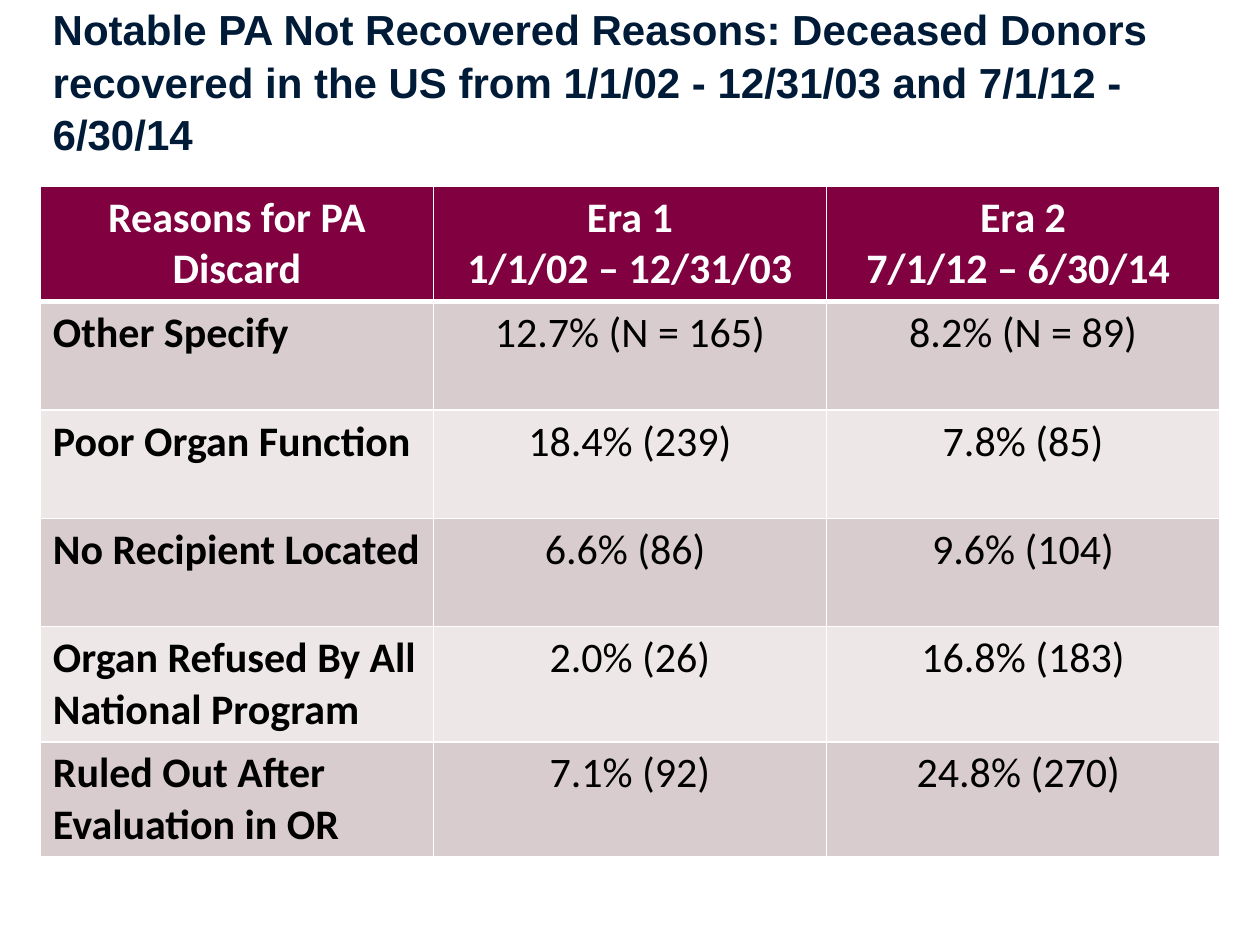
import dataclasses
import typing

import lxml.etree
import pptx
import pptx.dml.color
import pptx.enum.text
import pptx.oxml.ns
import pptx.util

Align = pptx.enum.text.PP_ALIGN


@dataclasses.dataclass(frozen=True)
class Theme:
    title_font: str = "Arial"
    table_font: str = "Calibri"
    size: int = 24
    title: str = "001B37"
    header: str = "800040"
    header_text: str = "FFFFFF"
    body_text: str = "000000"
    border: str = "FFFFFF"
    bands: tuple[str, str] = ("D8CCCF", "EDE7E8")


class Reason(typing.NamedTuple):
    name: str
    era_1: str
    era_2: str


THEME = Theme()
SLIDE_WIDTH = pptx.util.Inches(10)
SLIDE_HEIGHT = pptx.util.Inches(7.5)
LEFT = pptx.util.Inches(0.32)
COLUMN_WIDTH = pptx.util.Inches(3.12)
ROW_HEIGHT = pptx.util.Inches(0.86)

TITLE = ("Notable PA Not Recovered Reasons: Deceased Donors recovered in the US "
         "from 1/1/02 - 12/31/03 and 7/1/12 - 6/30/14")
HEADINGS = ("Reasons for PA Discard", "Era 1\n1/1/02 – 12/31/03", "Era 2\n7/1/12 – 6/30/14 ")
REASONS = (
    Reason("Other Specify", "12.7% (N = 165)", "8.2% (N = 89)"),
    Reason("Poor Organ Function", "18.4% (239)", "7.8% (85)"),
    Reason("No Recipient Located", "6.6% (86) ", "9.6% (104)"),
    Reason("Organ Refused By All National Program", "2.0% (26)", "16.8% (183)"),
    Reason("Ruled Out After Evaluation in OR", "7.1% (92)", "24.8% (270) "),
)


def rgb(color: str) -> pptx.dml.color.RGBColor:
    return pptx.dml.color.RGBColor.from_string(color)


def style_text(frame, font_name: str, color: str, bold: bool, align: Align) -> None:
    for paragraph in frame.paragraphs:
        paragraph.alignment = align
        paragraph.font.name = font_name
        paragraph.font.size = pptx.util.Pt(THEME.size)
        paragraph.font.bold = bold
        paragraph.font.color.rgb = rgb(color)


def set_borders(cell, top: float, bottom: float) -> None:
    """Draw all four cell borders, one point wide at the sides."""
    qn = pptx.oxml.ns.qn
    properties = cell._tc.get_or_add_tcPr()
    widths = {"a:lnL": 1, "a:lnR": 1, "a:lnT": top, "a:lnB": bottom}
    for position, (tag, width) in enumerate(widths.items()):
        line = lxml.etree.Element(qn(tag), w=str(pptx.util.Pt(width)))
        fill = lxml.etree.SubElement(line, qn("a:solidFill"))
        lxml.etree.SubElement(fill, qn("a:srgbClr"), val=THEME.border)
        properties.insert(position, line)


def fill_cell(cell, text: str, row: int, column: int) -> None:
    is_header = row == 0
    is_name = column == 0
    cell.text = text
    cell.fill.solid()
    cell.fill.fore_color.rgb = rgb(THEME.header if is_header else THEME.bands[(row - 1) % 2])
    style_text(
        cell.text_frame,
        THEME.table_font,
        THEME.header_text if is_header else THEME.body_text,
        bold=is_header or is_name,
        align=Align.LEFT if is_name and not is_header else Align.CENTER,
    )
    set_borders(cell, top=3 if row == 1 else 1, bottom=3 if is_header else 1)


def add_title(slide) -> None:
    box = slide.shapes.add_textbox(
        LEFT, pptx.util.Inches(0.17), pptx.util.Inches(9.56), pptx.util.Inches(0.93))
    frame = box.text_frame
    frame.word_wrap = True
    frame.vertical_anchor = pptx.enum.text.MSO_ANCHOR.MIDDLE
    frame.text = TITLE
    style_text(frame, THEME.title_font, THEME.title, bold=True, align=Align.LEFT)
    frame.paragraphs[0].line_spacing = 1.05


def add_reasons_table(slide) -> None:
    rows = (HEADINGS, *REASONS)
    table = slide.shapes.add_table(
        len(rows), len(HEADINGS), LEFT, pptx.util.Inches(1.48),
        COLUMN_WIDTH * len(HEADINGS), ROW_HEIGHT * len(rows)).table
    for column in table.columns:
        column.width = COLUMN_WIDTH
    for row, texts in enumerate(rows):
        for column, text in enumerate(texts):
            fill_cell(table.cell(row, column), text, row, column)


def main() -> None:
    deck = pptx.Presentation()
    deck.slide_width, deck.slide_height = SLIDE_WIDTH, SLIDE_HEIGHT
    slide = deck.slides.add_slide(deck.slide_layouts[6])
    add_reasons_table(slide)
    add_title(slide)
    deck.save("out.pptx")


if __name__ == "__main__":
    main()
